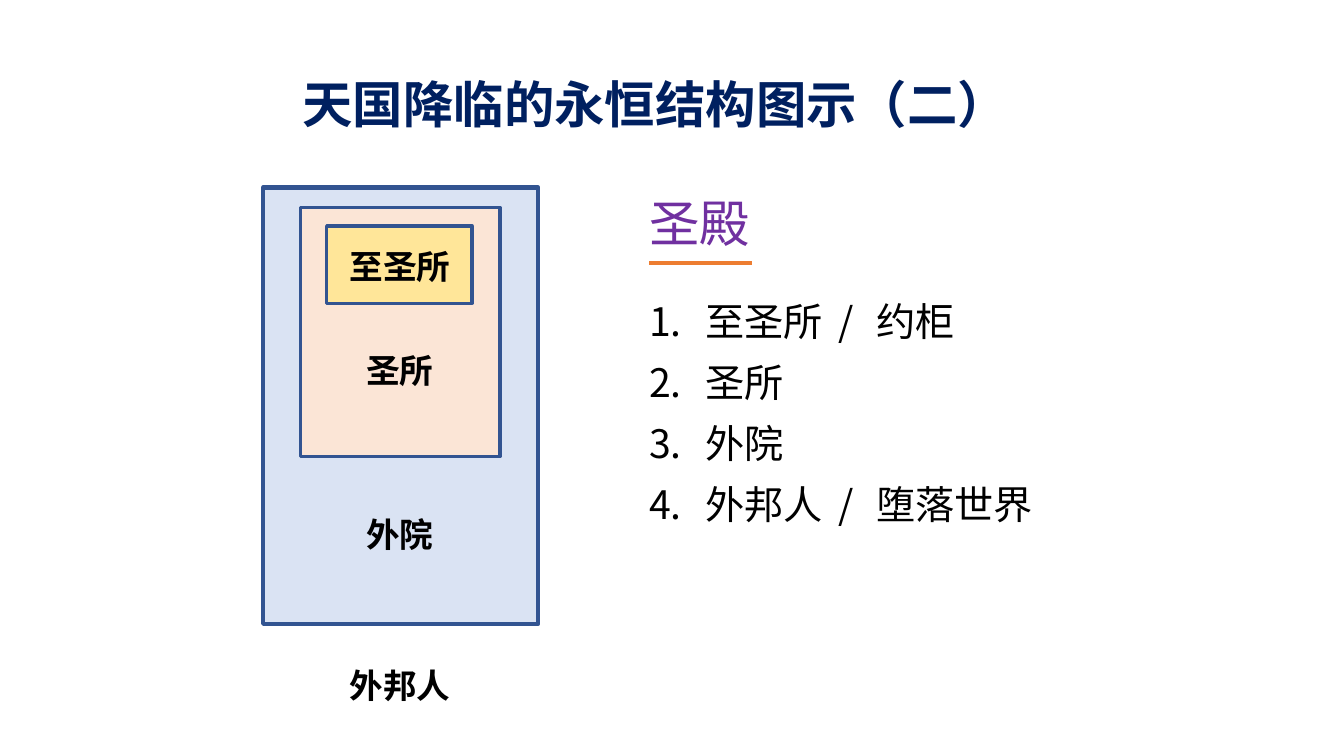
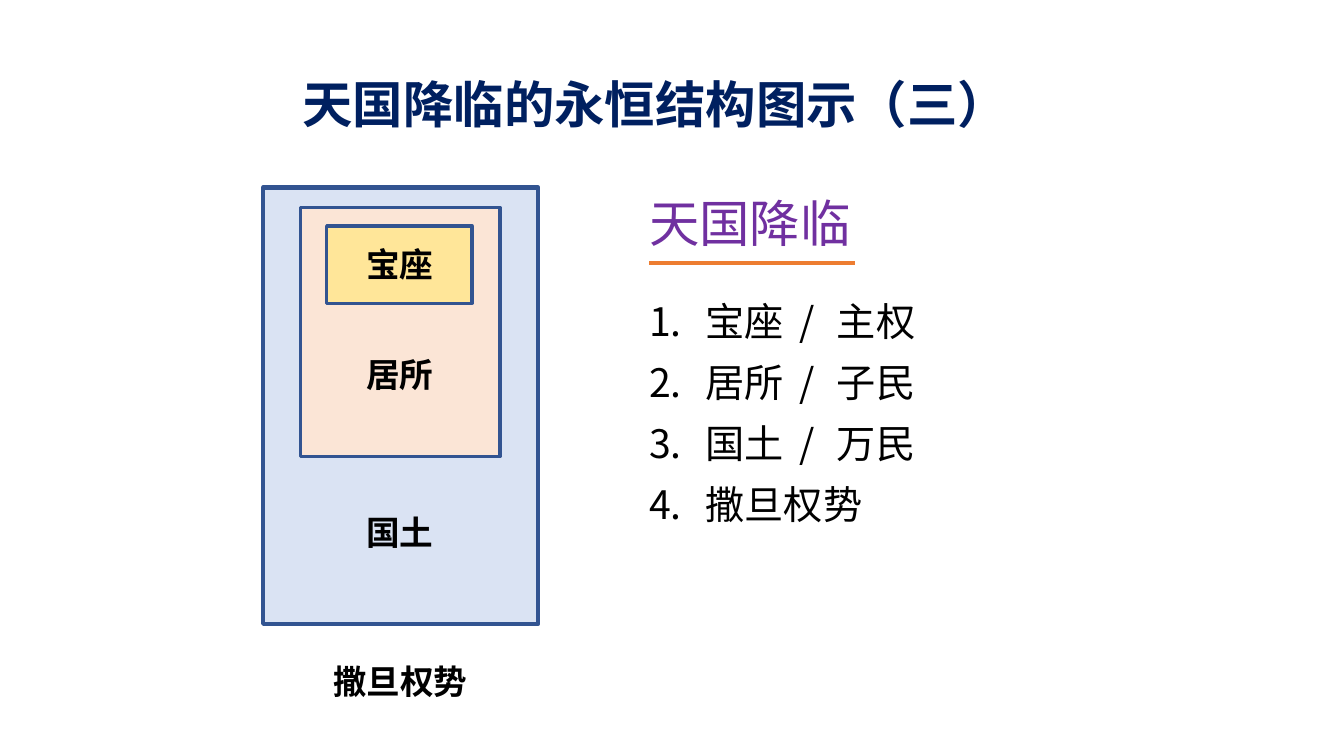
from lxml.etree import SubElement
from pptx import Presentation
from pptx.dml.color import RGBColor
from pptx.enum.shapes import MSO_CONNECTOR, MSO_SHAPE
from pptx.enum.text import MSO_AUTO_SIZE, PP_ALIGN
from pptx.oxml.ns import qn
from pptx.util import Inches, Pt

COLORS = {
    "title": "002060",
    "heading": "7030A0",
    "text": "000000",
    "accent": "ED7D31",
    "border": "325491",
    "outer": "DAE3F3",
    "middle": "FBE5D6",
    "inner": "FFE699",
}
SC, TC = "Noto Sans CJK SC", "Noto Sans CJK TC"
STYLES = {
    "title": {"size": Pt(36), "name": SC, "bold": True},
    "heading": {"size": Pt(36), "name": SC, "bold": False},
    "item": {"size": Pt(28), "name": SC, "bold": False},
    "label": {"size": Pt(24), "name": TC, "bold": True},
}

# Shared regions: left, top, width, height
TITLE_BOX = (2.03, 0.68, 8.94, 0.71)
DIAGRAM_BOX = (2.61, 1.86, 2.73, 4.33)
OUTLINE_BOX = (6.34, 1.86, 4.63, 3.46)

# Nested areas: offset from the diagram box, size, fill, border width
AREAS = [
    (0, 0, 2.73, 4.33, "outer", 3),
    (0.37, 0.2, 1.98, 2.47, "middle", 2.5),
    (0.63, 0.38, 1.44, 0.77, "inner", 2.5),
]

# Labels give their text and their distance below the diagram's top
SLIDES = [
    {
        "title": "天国降临的永恒结构图示（二）",
        "labels": [("至圣所", 0.53), ("圣所", 1.56), ("外院", 3.19), ("外邦人", 4.69)],
        "heading": "圣殿",
        "items": ["至圣所 / 约柜", "圣所", "外院", "外邦人 / 堕落世界"],
    },
    {
        "title": "天国降临的永恒结构图示（三）",
        "labels": [("宝座", 0.51), ("居所", 1.6), ("国土", 3.17), ("撒旦权势", 4.65)],
        "heading": "天国降临",
        "items": ["宝座 / 主权", "居所 / 子民", "国土 / 万民", "撒旦权势"],
    },
]


def rgb(key):
    return RGBColor.from_string(COLORS[key])


def add_run(paragraph, text, style, color="text", spacing=None):
    run = paragraph.add_run()
    run.text = text
    for attribute, value in STYLES[style].items():
        setattr(run.font, attribute, value)
    run.font.color.rgb = rgb(color)
    properties = run.font._element
    SubElement(properties, qn("a:ea"), typeface=STYLES[style]["name"])
    if spacing:
        properties.set("spc", str(spacing))


def add_text_frame(slide, box, wrap=True):
    frame = slide.shapes.add_textbox(*map(Inches, box)).text_frame
    frame.word_wrap = wrap
    frame.auto_size = MSO_AUTO_SIZE.SHAPE_TO_FIT_TEXT
    return frame


def add_title(slide, box, text):
    paragraph = add_text_frame(slide, box).paragraphs[0]
    paragraph.alignment = PP_ALIGN.CENTER
    add_run(paragraph, text, "title", "title")


def add_diagram(slide, box, labels):
    left, top, width, _ = box
    # Nested areas
    for x, y, area_width, area_height, fill, border in AREAS:
        shape = slide.shapes.add_shape(
            MSO_SHAPE.RECTANGLE,
            *map(Inches, (left + x, top + y, area_width, area_height)))
        shape.shadow.inherit = False
        shape.fill.solid()
        shape.fill.fore_color.rgb = rgb(fill)
        shape.line.color.rgb = rgb("border")
        shape.line.width = Pt(border)
    # Labels centred on the diagram
    for text, y in labels:
        label_width = 0.33 * len(text) + 0.22
        label_left = left + (width - label_width) / 2
        frame = add_text_frame(slide, (label_left, top + y, label_width, 0.5), False)
        add_run(frame.paragraphs[0], text, "label")


def add_item(frame, text, space_before):
    paragraph = frame.add_paragraph()
    paragraph.space_before = Pt(space_before)
    # Hanging automatic number
    properties = paragraph._p.get_or_add_pPr()
    properties.set("marL", str(Inches(0.56)))
    properties.set("indent", str(Inches(-0.56)))
    SubElement(properties, qn("a:buFont"), typeface="+mj-lt")
    SubElement(properties, qn("a:buAutoNum"), type="arabicPeriod")
    # Wider spacing around the slash
    first, slash, second = text.partition(" / ")
    add_run(paragraph, first, "item")
    if slash:
        add_run(paragraph, slash, "item", spacing=480)
        add_run(paragraph, second, "item")


def add_outline(slide, box, heading, items):
    left, top, _, _ = box
    frame = add_text_frame(slide, box)
    add_run(frame.paragraphs[0], heading, "heading", "heading")
    for index, text in enumerate(items):
        add_item(frame, text, 10 if index else 31.6)
    # Rule under the heading, as long as its text
    start, y = left + 0.1, top + 0.75
    rule = slide.shapes.add_connector(
        MSO_CONNECTOR.STRAIGHT,
        *map(Inches, (start, y, start + 0.51 * len(heading), y)))
    rule.line.color.rgb = rgb("accent")
    rule.line.width = Pt(2.75)
    SubElement(rule._element.spPr, qn("a:effectLst"))


def main():
    presentation = Presentation()
    presentation.slide_width = Inches(13.33)
    presentation.slide_height = Inches(7.5)
    for content in SLIDES:
        slide = presentation.slides.add_slide(presentation.slide_layouts[6])
        add_diagram(slide, DIAGRAM_BOX, content["labels"])
        add_outline(slide, OUTLINE_BOX, content["heading"], content["items"])
        add_title(slide, TITLE_BOX, content["title"])
    presentation.save("out.pptx")


if __name__ == "__main__":
    main()
